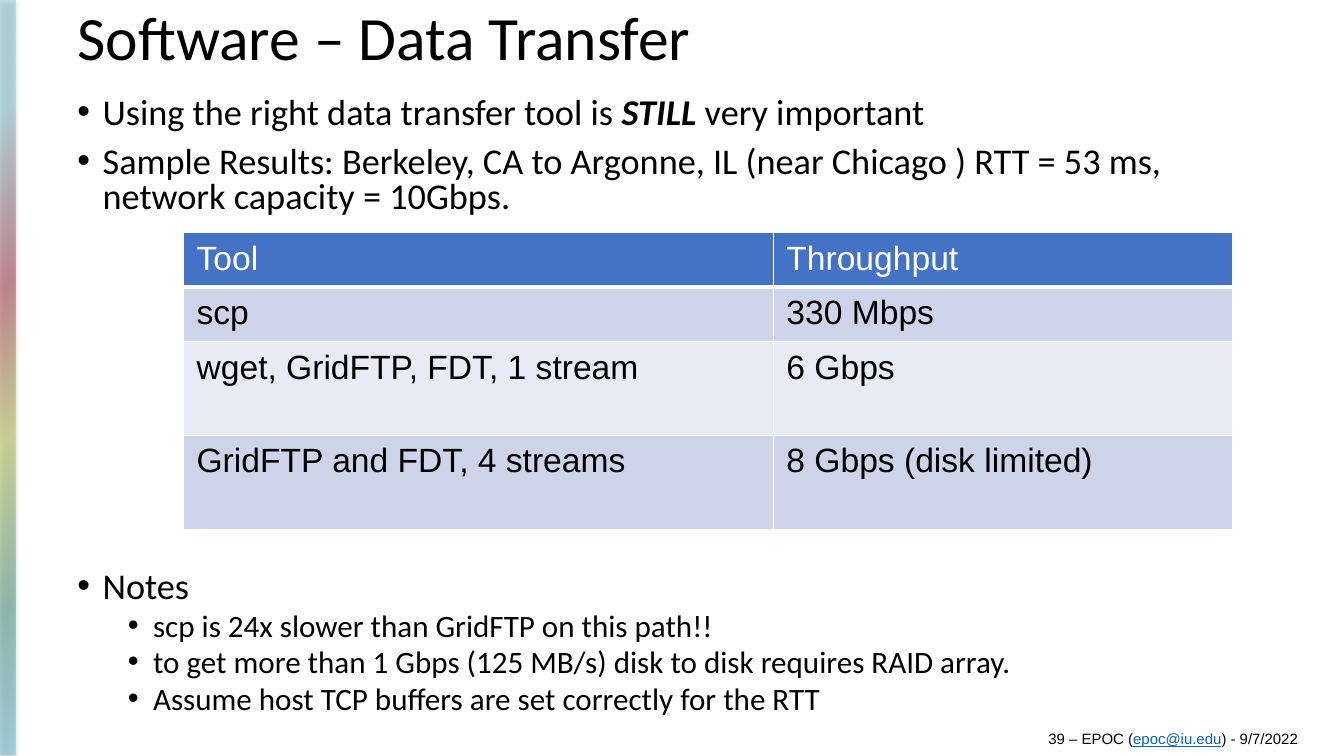
from dataclasses import dataclass

import pptx
import pptx.dml.color
import pptx.enum.shapes
import pptx.enum.text
import pptx.oxml
import pptx.oxml.ns
import pptx.util

Inches = pptx.util.Inches
Pt = pptx.util.Pt
RGBColor = pptx.dml.color.RGBColor
MIDDLE = pptx.enum.text.MSO_ANCHOR.MIDDLE

BLACK = RGBColor(0x00, 0x00, 0x00)
WHITE = RGBColor(0xFF, 0xFF, 0xFF)
LINK_BLUE = RGBColor(0x05, 0x63, 0xC1)
HEADER_BLUE = RGBColor(0x44, 0x72, 0xC4)
BAND_DARK = RGBColor(0xCD, 0xD4, 0xEA)
BAND_LIGHT = RGBColor(0xE8, 0xEB, 0xF5)
STRIP_STOPS = (
    (0, RGBColor(0x6C, 0xBF, 0xDC)),
    (20, RGBColor(0x45, 0x95, 0x82)),
    (42, RGBColor(0xBA, 0xC8, 0x51)),
    (62, RGBColor(0xA4, 0x2E, 0x40)),
    (85, RGBColor(0x84, 0xC8, 0xD3)),
    (100, RGBColor(0x84, 0xC8, 0xD3)),
)
NS = pptx.oxml.ns.nsdecls("a")


@dataclass(frozen=True)
class Span:
    text: str
    emphasis: bool = False
    link: bool = False


@dataclass(frozen=True)
class Bullet:
    spans: tuple[Span, ...]
    size: float = 25.9
    indent: float = 0.25
    space_before: float = 10


@dataclass(frozen=True)
class ToolRow:
    tool: str
    throughput: str
    height: float
    fill: RGBColor
    color: RGBColor = BLACK


FINDINGS = (
    Bullet((Span("Using the right data transfer tool is "),
            Span("STILL", emphasis=True),
            Span(" very important"))),
    Bullet((Span("Sample Results: Berkeley, CA to Argonne, IL (near Chicago ) "
                 "RTT = 53 ms, network capacity = 10Gbps."),)),
)
NOTES = (Bullet((Span("Notes"),)),) + tuple(
    Bullet((Span(text),), size=22.2, indent=0.75, space_before=5)
    for text in (
        "scp is 24x slower than GridFTP on this path!!",
        "to get more than 1 Gbps (125 MB/s) disk to disk requires RAID array.",
        "Assume host TCP buffers are set correctly for the RTT",
    )
)
TOOL_ROWS = (
    ToolRow("Tool", "Throughput", 0.54, HEADER_BLUE, WHITE),
    ToolRow("scp", "330 Mbps", 0.54, BAND_DARK),
    ToolRow("wget, GridFTP, FDT, 1 stream", "6 Gbps", 0.93, BAND_LIGHT),
    ToolRow("GridFTP and FDT, 4 streams", "8 Gbps (disk limited)", 0.93, BAND_DARK),
)
COLUMN_WIDTHS = (5.85, 4.55)
FOOTER = (Span("39 – EPOC ("), Span("epoc@iu.edu", link=True), Span(") - 9/7/2022"))


def set_font(paragraph, name: str, size: float, color: RGBColor) -> None:
    paragraph.font.name = name
    paragraph.font.size = Pt(size)
    paragraph.font.color.rgb = color


def add_spans(paragraph, spans: tuple[Span, ...]) -> None:
    for span in spans:
        run = paragraph.add_run()
        run.text = span.text
        if span.emphasis:
            run.font.bold = run.font.italic = True
        if span.link:
            run.font.color.rgb = LINK_BLUE
            run.font.underline = True


def add_text_frame(slide, left: float, top: float, width: float, height: float):
    box = slide.shapes.add_textbox(
        Inches(left), Inches(top), Inches(width), Inches(height))
    box.text_frame.word_wrap = True
    return box.text_frame


def add_bullets(slide, top: float, height: float, bullets: tuple[Bullet, ...]) -> None:
    frame = add_text_frame(slide, 0.67, top, 12, height)
    for index, bullet in enumerate(bullets):
        paragraph = frame.add_paragraph() if index else frame.paragraphs[0]
        paragraph.line_spacing = 0.8
        if index:
            paragraph.space_before = Pt(bullet.space_before)
        properties = paragraph._p.get_or_add_pPr()
        properties.set("marL", str(Inches(bullet.indent)))
        properties.set("indent", str(-Inches(0.25)))
        for mark in ('<a:buFont {} typeface="Arial"/>', '<a:buChar {} char="•"/>'):
            properties.append(pptx.oxml.parse_xml(mark.format(NS)))
        set_font(paragraph, "Calibri", bullet.size, BLACK)
        add_spans(paragraph, bullet.spans)


def add_strip(slide) -> None:
    """Draw the translucent rainbow strip along the left edge."""
    strip = slide.shapes.add_shape(
        pptx.enum.shapes.MSO_SHAPE.RECTANGLE, 0, 0, Inches(0.15), Inches(7.49))
    strip.line.fill.background()
    strip.fill.gradient()
    strip.shadow.inherit = False
    properties = strip._element.spPr
    stops = "".join(
        f'<a:gs pos="{position * 1000}"><a:srgbClr val="{color}">'
        '<a:alpha val="49000"/></a:srgbClr></a:gs>'
        for position, color in STRIP_STOPS)
    gradient = pptx.oxml.parse_xml(
        f'<a:gradFill {NS} rotWithShape="1"><a:gsLst>{stops}</a:gsLst>'
        '<a:path path="circle"><a:fillToRect l="100000" t="100000"/></a:path>'
        '</a:gradFill>')
    properties.replace(properties.find(pptx.oxml.ns.qn("a:gradFill")), gradient)
    properties.find(pptx.oxml.ns.qn("a:effectLst")).append(pptx.oxml.parse_xml(
        f'<a:outerShdw {NS} blurRad="{Pt(3.1)}" dist="{Pt(1.8)}" dir="5400000" '
        f'rotWithShape="0"><a:srgbClr val="{BLACK}"><a:alpha val="34000"/>'
        '</a:srgbClr></a:outerShdw>'))


def add_cell_borders(cell, top: float, bottom: float) -> None:
    properties = cell._tc.get_or_add_tcPr()
    for side, width in (("L", 1), ("R", 1), ("T", top), ("B", bottom)):
        properties.append(pptx.oxml.parse_xml(
            f'<a:ln{side} {NS} w="{Pt(width)}"><a:solidFill>'
            f'<a:srgbClr val="{WHITE}"/></a:solidFill></a:ln{side}>'))


def add_tool_table(slide) -> None:
    table = slide.shapes.add_table(
        len(TOOL_ROWS), len(COLUMN_WIDTHS), Inches(1.82), Inches(2.31),
        Inches(sum(COLUMN_WIDTHS)), Inches(sum(row.height for row in TOOL_ROWS))).table
    for column, width in zip(table.columns, COLUMN_WIDTHS):
        column.width = Inches(width)
    for index, row in enumerate(TOOL_ROWS):
        table.rows[index].height = Inches(row.height)
        for cell, text in zip(table.rows[index].cells, (row.tool, row.throughput)):
            add_cell_borders(cell, 3 if index == 1 else 1, 3 if index == 0 else 1)
            cell.fill.solid()
            cell.fill.fore_color.rgb = row.fill
            cell.margin_left = cell.margin_right = Inches(0.13)
            cell.margin_top = cell.margin_bottom = Inches(0.07)
            paragraph = cell.text_frame.paragraphs[0]
            paragraph.text = text
            set_font(paragraph, "Arial", 24, row.color)
            paragraph.font.bold = False


def main() -> None:
    presentation = pptx.Presentation()
    presentation.slide_width = Inches(13.33)
    presentation.slide_height = Inches(7.5)
    slide = presentation.slides.add_slide(presentation.slide_layouts[6])

    add_strip(slide)

    title = add_text_frame(slide, 0.67, 0, 12, 0.8)
    title.vertical_anchor = MIDDLE
    heading = title.paragraphs[0]
    heading.text = "Software – Data Transfer"
    heading.line_spacing = 0.9
    set_font(heading, "Calibri", 44, BLACK)

    add_bullets(slide, 0.92, 1.3, FINDINGS)
    add_tool_table(slide)
    add_bullets(slide, 5.62, 1.6, NOTES)

    footer = add_text_frame(slide, 10.3, 7.23, 2.9, 0.2)
    footer.vertical_anchor = MIDDLE
    set_font(footer.paragraphs[0], "Arial", 10.7, BLACK)
    add_spans(footer.paragraphs[0], FOOTER)

    presentation.save("out.pptx")


if __name__ == "__main__":
    main()
